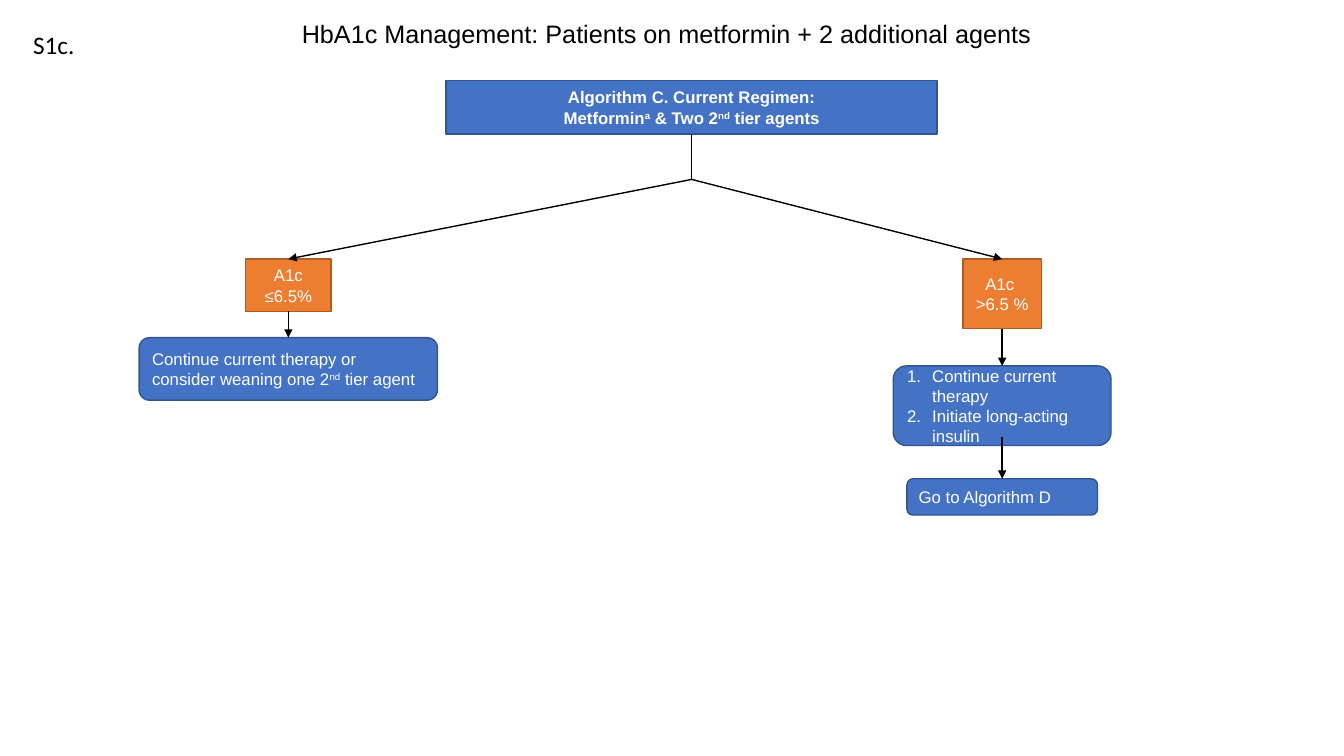
from lxml.etree import SubElement
from pptx import Presentation
from pptx.dml.color import RGBColor
from pptx.enum.shapes import MSO_CONNECTOR, MSO_SHAPE
from pptx.enum.text import MSO_ANCHOR, MSO_AUTO_SIZE, PP_ALIGN
from pptx.oxml.ns import qn
from pptx.util import Inches, Pt

COLORS = {
    "blue": "4472C4", "blue edge": "325491",
    "orange": "ED7D31", "orange edge": "AF5C24",
    "white": "FFFFFF", "black": "000000",
}
RGB = {name: RGBColor.from_string(value) for name, value in COLORS.items()}
LEFT_BRANCH, TRUNK, RIGHT_BRANCH = 2.86, 6.86, 9.94
FORK_TOP = 1.78

deck = Presentation()
deck.slide_width, deck.slide_height = Inches(13.33), Inches(7.5)
slide = deck.slides.add_slide(deck.slide_layouts[5])


def add_step(kind, center, top, width, height, color, lines, align, bold=False):
    step = slide.shapes.add_shape(kind, Inches(center - width / 2), Inches(top),
                                  Inches(width), Inches(height))
    step.shadow.inherit = False
    step.fill.solid()
    step.fill.fore_color.rgb = RGB[color]
    step.line.color.rgb = RGB[color + " edge"]
    step.line.width = Pt(1)
    frame = step.text_frame
    frame.word_wrap = True
    frame.vertical_anchor = MSO_ANCHOR.MIDDLE
    for i, line in enumerate(lines):
        paragraph = frame.paragraphs[0] if i == 0 else frame.add_paragraph()
        paragraph.alignment = align
        paragraph.font.name = "Arial"
        paragraph.font.size = Pt(12)
        paragraph.font.bold = bold
        paragraph.font.color.rgb = RGB["white"]
        for j, part in enumerate(line.split("^")):
            run = paragraph.add_run()
            run.text = part
            if j % 2:
                run._r.get_or_add_rPr().set("baseline", "30000")
    return step


def add_link(start, end, source=None, target=None, arrow=True):
    link = slide.shapes.add_connector(MSO_CONNECTOR.STRAIGHT,
                                      *[Inches(v) for v in start + end])
    if source is not None:
        link.begin_connect(source, 2)
    if target is not None:
        link.end_connect(target, 0)
    link.line.color.rgb = RGB["black"]
    link.line.width = Pt(1)
    if arrow:
        SubElement(link.line._get_or_add_ln(), qn("a:tailEnd"), type="triangle")
    SubElement(link._element.spPr, qn("a:effectLst"))


regimen = add_step(MSO_SHAPE.RECTANGLE, TRUNK, 0.8, 4.87, 0.53, "blue",
                   ["Algorithm C. Current Regimen:",
                    "Metformin^a^ & Two 2^nd^ tier agents"], PP_ALIGN.CENTER, True)
at_goal = add_step(MSO_SHAPE.RECTANGLE, LEFT_BRANCH, 2.57, 0.85, 0.52, "orange",
                   ["A1c ≤6.5%"], PP_ALIGN.CENTER)
wean = add_step(MSO_SHAPE.ROUNDED_RECTANGLE, LEFT_BRANCH, 3.35, 2.96, 0.62, "blue",
                ["Continue current therapy or consider weaning one 2^nd^ tier agent"],
                PP_ALIGN.LEFT)
above_goal = add_step(MSO_SHAPE.RECTANGLE, RIGHT_BRANCH, 2.57, 0.78, 0.69, "orange",
                      ["A1c ", ">6.5 %"], PP_ALIGN.CENTER)
insulin = add_step(MSO_SHAPE.ROUNDED_RECTANGLE, RIGHT_BRANCH, 3.63, 2.16, 0.79, "blue",
                   ["Continue current therapy", "Initiate long-acting insulin"],
                   PP_ALIGN.LEFT)
algorithm_d = add_step(MSO_SHAPE.ROUNDED_RECTANGLE, RIGHT_BRANCH, 4.75, 1.89, 0.36,
                       "blue", ["Go to Algorithm D"], PP_ALIGN.LEFT)

for paragraph in insulin.text_frame.paragraphs:
    properties = paragraph._p.get_or_add_pPr()
    properties.set("marL", str(Inches(0.25)))
    properties.set("indent", str(-Inches(0.25)))
    SubElement(properties, qn("a:buFont"), typeface="+mj-lt")
    SubElement(properties, qn("a:buAutoNum"), type="arabicPeriod")
    properties.append(properties.find(qn("a:defRPr")))

add_link((TRUNK, 1.33), (TRUNK, FORK_TOP), source=regimen, arrow=False)
for branch, goal in ((LEFT_BRANCH, at_goal), (RIGHT_BRANCH, above_goal)):
    add_link((TRUNK, FORK_TOP), (branch, 2.57), target=goal)
add_link((LEFT_BRANCH, 3.09), (LEFT_BRANCH, 3.35), at_goal, wean)
add_link((RIGHT_BRANCH, 3.26), (RIGHT_BRANCH, 3.63), above_goal, insulin)
add_link((RIGHT_BRANCH, 4.34), (RIGHT_BRANCH, 4.75), target=algorithm_d)

heading = slide.shapes.title
heading.left, heading.top = Inches(2.86), Inches(0.13)
heading.width, heading.height = Inches(7.5), Inches(0.4)
figure_label = slide.shapes.add_textbox(Inches(0.23), Inches(0.24),
                                        Inches(0.79), Inches(0.4))
for shape, text, font, align, wrap in (
    (heading, "HbA1c Management: Patients on metformin + 2 additional agents",
     "Arial", PP_ALIGN.CENTER, False),
    (figure_label, "S1c.", "Calibri", PP_ALIGN.LEFT, True),
):
    frame = shape.text_frame
    frame.text = text
    frame.word_wrap = wrap
    frame.auto_size = MSO_AUTO_SIZE.SHAPE_TO_FIT_TEXT
    frame.vertical_anchor = MSO_ANCHOR.TOP
    paragraph = frame.paragraphs[0]
    paragraph.alignment = align
    paragraph.font.name = font
    paragraph.font.size = Pt(18)
    paragraph.font.color.rgb = RGB["black"]

deck.save("out.pptx")
